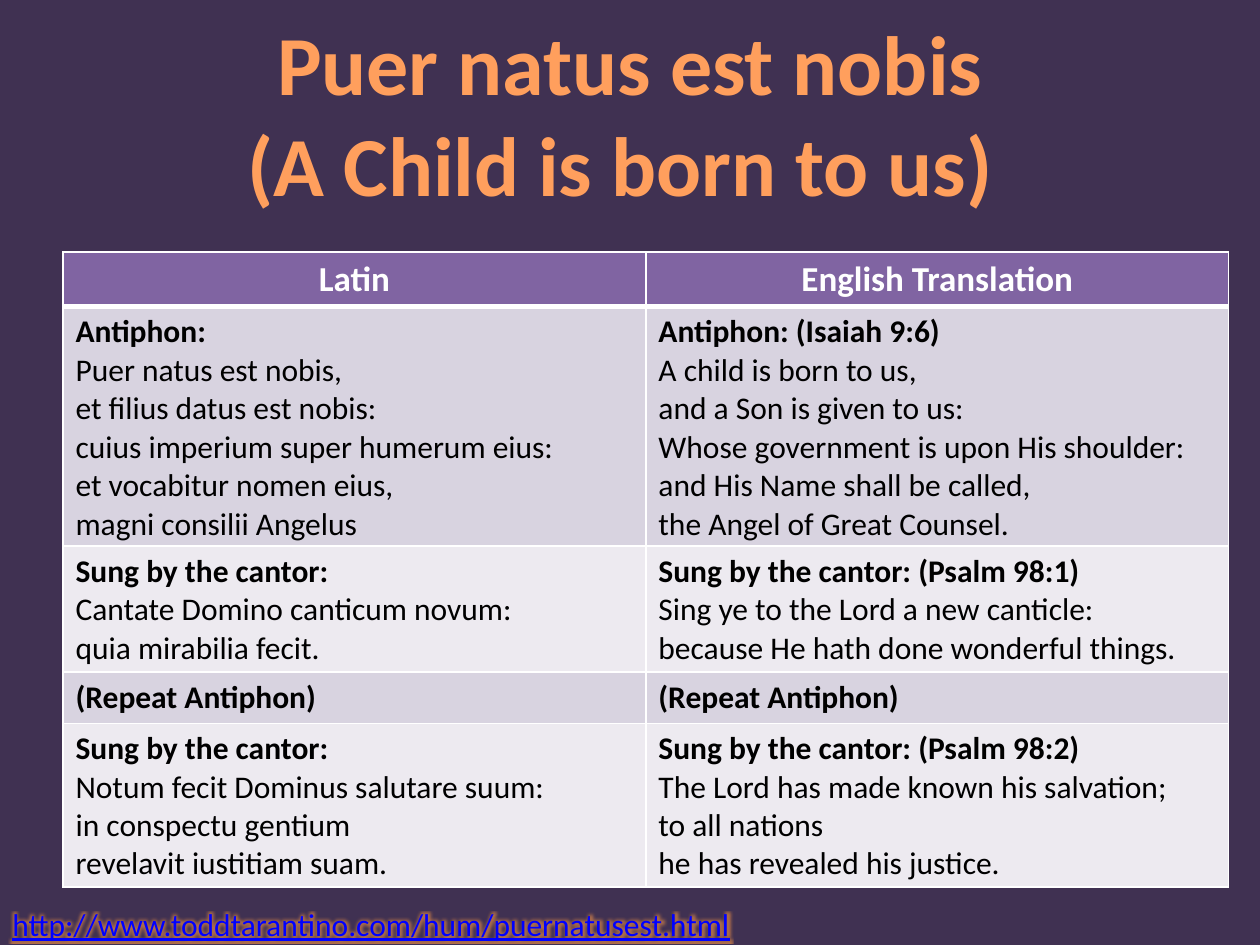
from dataclasses import dataclass

from lxml.etree import SubElement
from pptx import Presentation
from pptx.dml.color import RGBColor as Rgb
from pptx.enum.text import MSO_ANCHOR as Anchor, PP_ALIGN as Align
from pptx.oxml import parse_xml
from pptx.oxml.ns import nsdecls, qn
from pptx.util import Cm, Pt


@dataclass(frozen=True)
class Theme:
    font: str = "Calibri"
    background: str = "403152"
    title: str = "FF9F5D"
    link: str = "0000FF"
    glow: str = "F79646"
    header: str = "8064A2"
    bands: tuple[str, str] = ("D8D3E0", "EDEAF0")
    light: str = "FFFFFF"
    dark: str = "000000"
    title_size: int = 48
    header_size: int = 20
    body_size: int = 18


@dataclass(frozen=True)
class Box:
    left: float
    top: float
    width: float
    height: float

    def lengths(self) -> list[Cm]:
        return [Cm(v) for v in (self.left, self.top, self.width, self.height)]


@dataclass(frozen=True)
class Verse:
    """One table row; \\n starts a paragraph and \\v breaks a line."""
    latin: str
    english: str
    height: float
    anchor: Anchor = Anchor.TOP


THEME = Theme()
TITLE_BOX = Box(0, 0.08, 25.4, 4.37)
LINK_BOX = Box(0, 18.11, 17.35, 1.02)
TABLE_BOX = Box(1.27, 5.08, 23.5, 12.8)
HEADER_HEIGHT = 1.04

VERSES = [
    Verse("Antiphon:\nPuer natus est nobis,\n"
          "et filius datus est nobis:\vcuius imperium super humerum eius:\v"
          "et vocabitur nomen eius,\nmagni consilii Angelus",
          "Antiphon: (Isaiah 9:6)\nA child is born to us,\n"
          "and a Son is given to us:\vWhose government is upon His shoulder:\v"
          "and His Name shall be called,\nthe Angel of Great Counsel.",
          4.8, Anchor.MIDDLE),
    Verse("Sung by the cantor:\n"
          "Cantate Domino canticum novum:\vquia mirabilia fecit.",
          "Sung by the cantor: (Psalm 98:1)\n"
          "Sing ye to the Lord a new canticle:\v"
          "because He hath done wonderful things.", 2.5),
    Verse("(Repeat Antiphon)", "(Repeat Antiphon)", 1.03),
    Verse("Sung by the cantor:\nNotum fecit Dominus salutare suum:\v"
          "in conspectu gentium\nrevelavit iustitiam suam.",
          "Sung by the cantor: (Psalm 98:2)\n"
          "The Lord has made known his salvation;\vto all nations\n"
          "he has revealed his justice.", 3.28),
]


def style_para(para, size: int, color: str, bold: bool = False,
               align: Align = Align.LEFT) -> None:
    para.alignment = align
    for span in para.runs:
        font = span.font
        font.name, font.size, font.bold = THEME.font, Pt(size), bold
        font.color.rgb = Rgb.from_string(color)


def add_text(page, box: Box, text: str, anchor: Anchor = Anchor.TOP):
    """Add a one-paragraph text box and return the paragraph."""
    frame = page.shapes.add_textbox(*box.lengths()).text_frame
    frame.word_wrap = True
    frame.vertical_anchor = anchor
    para = frame.paragraphs[0]
    para.text = text
    return para


def add_glow(span, color: str, radius: int) -> None:
    effect = parse_xml(
        f'<a:effectLst {nsdecls("a")}><a:glow rad="{Pt(radius)}">'
        f'<a:srgbClr val="{color}"><a:alpha val="60000"/></a:srgbClr>'
        "</a:glow></a:effectLst>")
    span.font._element.find(qn("a:solidFill")).addnext(effect)


def paint_cell(cell, fill: str, bottom_width: int = 1,
               top_width: int = 1) -> None:
    """Draw the four white borders, then the fill."""
    properties = cell._tc.get_or_add_tcPr()
    for side, width in zip("LRTB", (1, 1, top_width, bottom_width)):
        line = SubElement(properties, qn(f"a:ln{side}"), w=str(Pt(width)))
        solid = SubElement(line, qn("a:solidFill"))
        SubElement(solid, qn("a:srgbClr"), val=THEME.light)
    cell.fill.solid()
    cell.fill.fore_color.rgb = Rgb.from_string(fill)


def add_verse_table(page, box: Box, verses: list[Verse]) -> None:
    table = page.shapes.add_table(len(verses) + 1, 2, *box.lengths()).table
    table.first_row = table.horz_banding = False
    for column in table.columns:
        column.width = Cm(box.width / 2)

    table.rows[0].height = Cm(HEADER_HEIGHT)
    for cell, label in zip(table.rows[0].cells, ("Latin", "English Translation")):
        cell.text_frame.text = label
        style_para(cell.text_frame.paragraphs[0], THEME.header_size,
                   THEME.light, True, Align.CENTER)
        paint_cell(cell, THEME.header, bottom_width=3)

    for number, verse in enumerate(verses):
        row = table.rows[number + 1]
        row.height = Cm(verse.height)
        for cell, text in zip(row.cells, (verse.latin, verse.english)):
            cell.text_frame.text = text
            cell.vertical_anchor = verse.anchor
            for index, para in enumerate(cell.text_frame.paragraphs):
                style_para(para, THEME.body_size, THEME.dark, bold=index == 0)
            paint_cell(cell, THEME.bands[number % 2],
                       top_width=3 if number == 0 else 1)


def main() -> None:
    deck = Presentation()
    deck.slide_width, deck.slide_height = Cm(25.4), Cm(19.05)
    page = deck.slides.add_slide(deck.slide_layouts[6])
    page.background.fill.solid()
    page.background.fill.fore_color.rgb = Rgb.from_string(THEME.background)

    title = add_text(page, TITLE_BOX,
                     "Puer natus est nobis\v(A Child is born to us) ",
                     Anchor.MIDDLE)
    style_para(title, THEME.title_size, THEME.title, True, Align.CENTER)

    address = add_text(page, LINK_BOX,
                       "http://www.toddtarantino.com/hum/puernatusest.html")
    style_para(address, THEME.body_size, THEME.link)
    address.runs[0].font.underline = True
    add_glow(address.runs[0], THEME.glow, 5)

    add_verse_table(page, TABLE_BOX, VERSES)
    deck.save("out.pptx")


if __name__ == "__main__":
    main()
